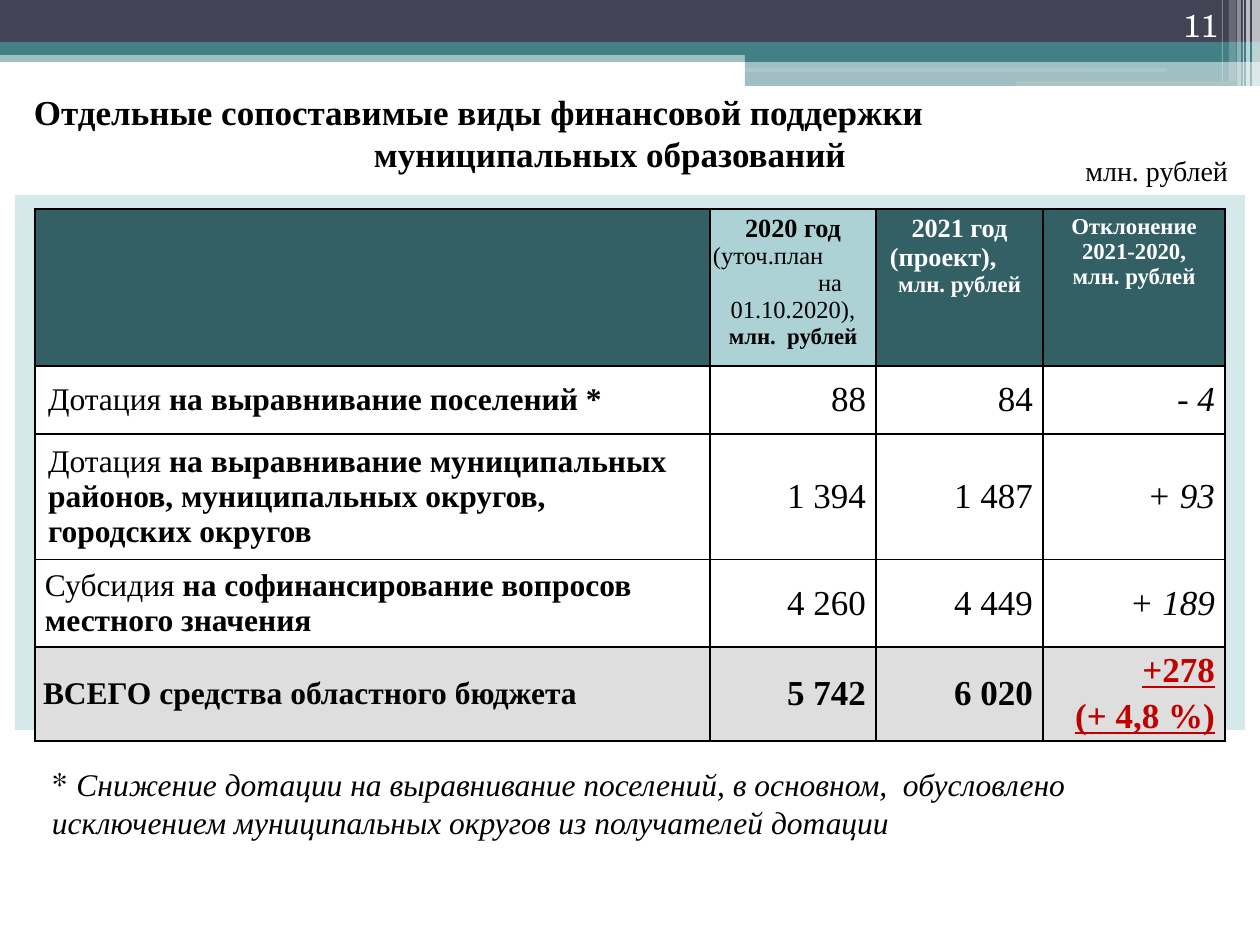
from dataclasses import dataclass
from lxml import etree
from pptx import Presentation
from pptx import util as u
from pptx.dml.color import RGBColor
from pptx.enum import shapes, text
from pptx.oxml.ns import qn

SIDES = {"l": text.PP_ALIGN.LEFT, "c": text.PP_ALIGN.CENTER, "r": text.PP_ALIGN.RIGHT}
ANCHORS = {"t": text.MSO_ANCHOR.TOP, "m": text.MSO_ANCHOR.MIDDLE, "b": text.MSO_ANCHOR.BOTTOM}
SERIF = "Times New Roman"
SCHOOL = "TeX Gyre Schola"
BLACK, WHITE, RED = "000000", "FFFFFF", "C00000"
TEAL, DARK, PALE, GREY = "438086", "326065", "ADD2D6", "DEDEDE"


def px(n):
    return u.Emu(round(n * 914400 / 126))


def rgb(code):
    return RGBColor.from_string(code)


@dataclass
class Para:
    words: str
    size: int
    look: str = ""
    side: str = "l"
    tint: str = BLACK
    face: str = SERIF
    lead: str = ""
    font: str = SERIF
    gap: int = 0
    pad: int = 0


class Deck:
    def __init__(self, wide, high):
        self.file = Presentation()
        self.file.slide_width, self.file.slide_height = px(wide), px(high)
        self.slide = self.file.slides.add_slide(self.file.slide_layouts[6])

    def paint(self, fill, tint, alpha=100):
        fill.solid()
        fill.fore_color.rgb = rgb(tint)
        if alpha < 100:
            node = fill._xPr.find(qn("a:solidFill"))[0]
            etree.SubElement(node, qn("a:alpha"), val=str(alpha * 1000))

    def bar(self, x, y, w, h, tint, alpha=100, kind=shapes.MSO_SHAPE.RECTANGLE):
        form = self.slide.shapes.add_shape(kind, px(x), px(y), px(w), px(h))
        form.shadow.inherit = False
        form.line.fill.background()
        self.paint(form.fill, tint, alpha)

    def style(self, font, look):
        font.bold, font.italic, font.underline = "b" in look, "i" in look, "u" in look

    def put(self, frame, paras):
        for i, item in enumerate(paras):
            para = frame.add_paragraph() if i else frame.paragraphs[0]
            para.alignment = SIDES[item.side]
            para.space_before = u.Pt(item.gap)
            if item.pad:
                para._p.get_or_add_pPr().set("marL", str(px(item.pad)))
            para.font.size = u.Pt(item.size)
            para.font.color.rgb = rgb(item.tint)
            para.font.name = item.face
            if item.lead:
                head = para.add_run()
                head.text, head.font.name = item.lead, item.font
                body = para.add_run()
                body.text = item.words
                self.style(body.font, item.look)
            else:
                para.add_run().text = item.words
                self.style(para.font, item.look)

    def label(self, x, y, w, h, paras, anchor="t", inset=13):
        frame = self.slide.shapes.add_textbox(px(x), px(y), px(w), px(h)).text_frame
        frame.word_wrap = True
        frame.vertical_anchor = ANCHORS[anchor]
        frame.margin_left = frame.margin_right = px(inset)
        self.put(frame, paras)

    def edge(self, cell):
        props = cell._tc.get_or_add_tcPr()
        for i, side in enumerate(("lnL", "lnR", "lnT", "lnB")):
            line = etree.Element(qn("a:" + side), w=str(u.Pt(1)))
            fill = etree.SubElement(line, qn("a:solidFill"))
            etree.SubElement(fill, qn("a:srgbClr"), val=BLACK)
            props.insert(i, line)

    def grid(self, x, y, cols, rows, cells):
        table = self.slide.shapes.add_table(
            len(rows), len(cols), px(x), px(y), px(sum(cols)), px(sum(rows))).table
        for col, w in zip(table.columns, cols):
            col.width = px(w)
        for row, h in zip(table.rows, rows):
            row.height = px(h)
        for r, line in enumerate(cells):
            for c, (paras, fill, anchor, inset) in enumerate(line):
                cell = table.cell(r, c)
                (cell.margin_left, cell.margin_top,
                 cell.margin_right, cell.margin_bottom) = map(px, inset)
                cell.vertical_anchor = ANCHORS[anchor]
                self.paint(cell.fill, fill)
                self.edge(cell)
                self.put(cell.text_frame, paras)


def heads():
    year = [Para("2020 год", 15, "b", "c"), Para("(уточ.план", 14),
            Para("на", 14, pad=105), Para("01.10.2020),", 14, side="c"),
            Para("млн.  рублей", 13, "b", "c")]
    plan = [Para("2021 год", 15, "b", "c", WHITE),
            Para("(проект),", 15, "b", "l", WHITE, pad=11),
            Para("млн. рублей", 13, "b", "c", WHITE)]
    diff = [Para(words, 13, "b", "c", WHITE)
            for words in ("Отклонение", "2021-2020,", "млн. рублей")]
    inset = (3, 5, 3, 5)
    return [(paras, fill, "t", inset) for paras, fill in
            (([], DARK), (year, PALE), (plan, DARK), (diff, DARK))]


def line(lead, name, left, past, plan, diff):
    nums = [Para(past, 20, "", "r"), Para(plan, 20, "", "r"), Para(diff, 20, "i", "r")]
    return [([Para(name, 18, "b", lead=lead)], WHITE, "m", (left, 6, 13, 6))] + [
        ([num], WHITE, "m", (13, 6, 10, 6)) for num in nums]


def total():
    name = [Para("ВСЕГО средства областного бюджета", 18, "b")]
    diff = [Para("+278", 20, "bu", "r", RED), Para("(+ 4,8 %)", 20, "bu", "r", RED, gap=4)]
    sums = [[Para(num, 20, "b", "r")] for num in ("5 742", "6 020")]
    return [(paras, GREY, "m", (8, 0, 10, 0)) for paras in (name, *sums, diff)]


def main():
    deck = Deck(1260, 945)
    for box in ((0, 50, 1260, 12, TEAL, 50), (0, 0, 1260, 43, "424456"),
                (0, 42, 1260, 13, TEAL), (745, 49, 515, 13, TEAL),
                (745, 61, 515, 25, TEAL, 50)):
        deck.bar(*box)
    for x, y, w, h in ((745, 68, 422, 4), (1016, 81, 220, 5)):
        deck.bar(x, y, w, h, WHITE, 11, shapes.MSO_SHAPE.ROUNDED_RECTANGLE)
    for x, w, h, alpha in ((1252, 8, 86, 65), (1246, 4, 86, 65), (1243, 1, 86, 60),
                           (1237, 4, 86, 40), (1229, 7, 81, 20), (1222, 1, 81, 30)):
        deck.bar(x, 0, w, h, WHITE, alpha)
    deck.bar(15, 195, 1230, 535, "D6E9EA")

    deck.label(34, 98, 1152, 68, [
        Para("Отдельные сопоставимые виды финансовой поддержки", 20, "b"),
        Para("муниципальных образований", 20, "b", "c")], "m", 0)
    deck.grid(35, 209, (675, 166, 167, 182), (150, 68, 118, 83, 94), [
        heads(),
        line("Дотация ", "на выравнивание поселений *", 13, "88", "84", "- 4"),
        line("Дотация ", "на выравнивание муниципальных районов, муниципальных "
             "округов, городских округов", 13, "1 394", "1 487", "+ 93"),
        line("Субсидия ", "на софинансирование вопросов местного значения", 10,
             "4 260", "4 449", "+ 189"),
        total()])
    deck.label(1126, 0, 105, 50, [Para("11", 18, "", "r", WHITE, SCHOOL)], "b")
    deck.label(1024, 147, 217, 47, [Para("млн. рублей", 16, "", "r")])
    deck.label(39, 759, 1172, 89, [
        Para("Снижение дотации на выравнивание поселений, в основном,  обусловлено "
             "исключением муниципальных округов из получателей дотации",
             18, "i", lead="* ", font=SCHOOL)])
    deck.file.save("out.pptx")


if __name__ == "__main__":
    main()
